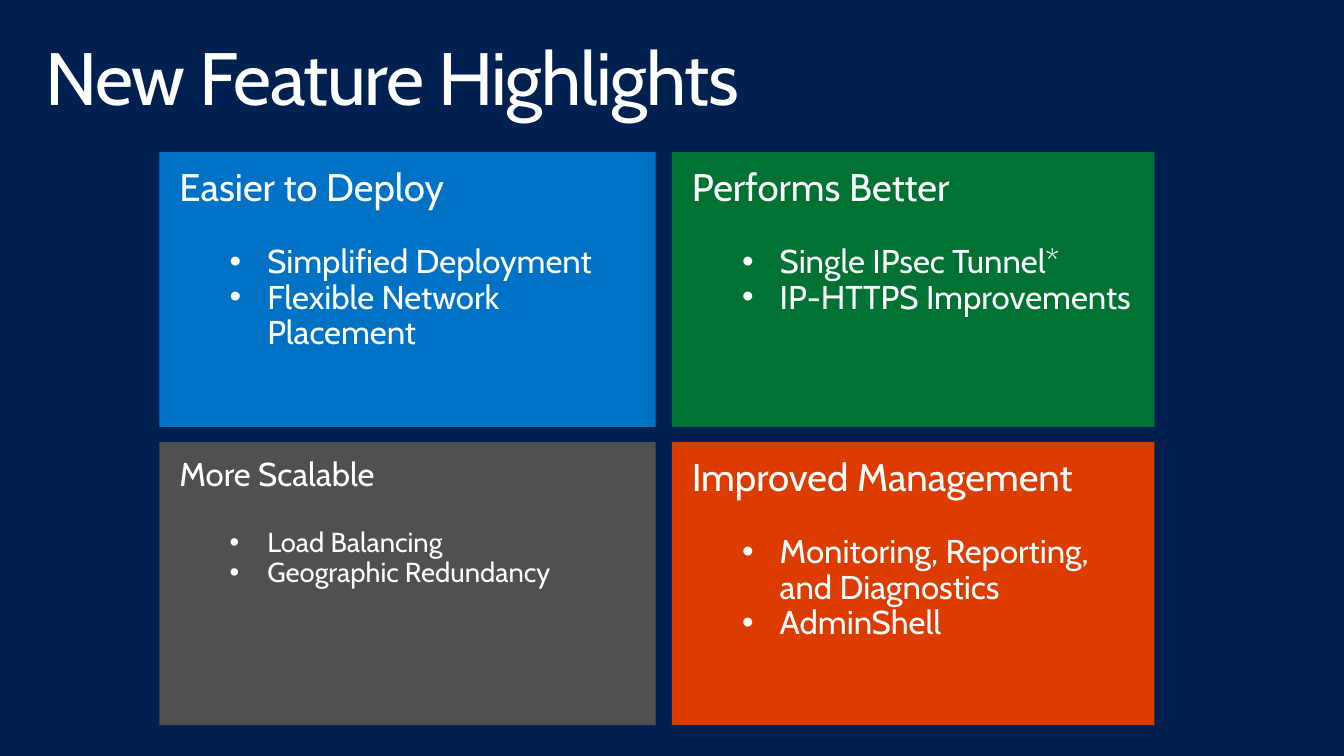
from dataclasses import dataclass

from lxml import etree
from pptx import Presentation
from pptx.dml.color import RGBColor
from pptx.enum.shapes import MSO_SHAPE
from pptx.enum.text import MSO_ANCHOR, PP_ALIGN
from pptx.oxml.ns import qn
from pptx.util import Cm, Pt

RECTANGLE = MSO_SHAPE.RECTANGLE
TOP = MSO_ANCHOR.TOP
LEFT = PP_ALIGN.LEFT


@dataclass(frozen=True)
class Theme:
    font: str = "Cabin"
    background: str = "002050"
    text: str = "FFFFFF"
    blue: str = "0072C6"
    green: str = "007233"
    grey: str = "505050"
    orange: str = "DC3C00"
    title_size: int = 54
    heading_size: int = 28
    bullet_size: int = 24
    small_heading_size: int = 24
    small_bullet_size: int = 20
    heading_gap: int = 26
    line_spacing: float = 0.9


THEME = Theme()

# (left, width) of each column and (top, height) of each row, in cm
COLUMNS = ((4.1, 12.75), (17.27, 12.4))
ROWS = ((3.91, 7.06), (11.36, 7.28))

# column, row, fill, heading size, bullet size, heading, bullets
TILES = (
    (0, 0, THEME.blue, THEME.heading_size, THEME.bullet_size,
     "Easier to Deploy",
     ("Simplified Deployment", "Flexible Network Placement")),
    (1, 0, THEME.green, THEME.heading_size, THEME.bullet_size,
     "Performs Better",
     ("Single IPsec Tunnel*", "IP-HTTPS Improvements")),
    (0, 1, THEME.grey, THEME.small_heading_size, THEME.small_bullet_size,
     "More Scalable",
     ("Load Balancing", "Geographic Redundancy")),
    (1, 1, THEME.orange, THEME.heading_size, THEME.bullet_size,
     "Improved Management",
     ("Monitoring, Reporting, and Diagnostics", "AdminShell")),
)


def set_frame(frame, side, top):
    """Wrap the text from the top, with equal opposite insets in cm."""
    frame.word_wrap = True
    frame.vertical_anchor = TOP
    frame.margin_left = frame.margin_right = Cm(side)
    frame.margin_top = frame.margin_bottom = Cm(top)


def write(paragraph, text, size, gap_after=0, tracking=None, bullet=False):
    """Fill a paragraph; tracking is in hundredths of a point."""
    paragraph.alignment = LEFT
    paragraph.line_spacing = THEME.line_spacing
    paragraph.space_before = Pt(0)
    paragraph.space_after = Pt(gap_after)
    run = paragraph.add_run()
    run.text = text
    run.font.name = THEME.font
    run.font.size = Pt(size)
    run.font.color.rgb = RGBColor.from_string(THEME.text)
    if tracking is not None:
        run.font._element.set("spc", str(tracking))
    if bullet:
        add_bullet(paragraph)


def add_bullet(paragraph):
    paragraph.level = 1
    properties = paragraph._p.get_or_add_pPr()
    properties.set("marL", str(Cm(2.26)))
    properties.set("indent", str(Cm(-0.97)))
    etree.SubElement(properties, qn("a:buFont"), typeface="Arial")
    etree.SubElement(properties, qn("a:buChar"), char="•")


def add_title(slide, text):
    title = slide.shapes.add_textbox(Cm(0.76), Cm(0.81), Cm(22.86), Cm(2.46))
    set_frame(title.text_frame, 0.41, 0.25)
    write(title.text_frame.paragraphs[0], text, THEME.title_size, tracking=-100)


def add_tile(slide, column, row, fill, heading_size, bullet_size, heading, bullets):
    left, width = COLUMNS[column]
    top, height = ROWS[row]
    tile = slide.shapes.add_shape(RECTANGLE, Cm(left), Cm(top), Cm(width), Cm(height))
    tile.shadow.inherit = False
    tile.fill.solid()
    tile.fill.fore_color.rgb = RGBColor.from_string(fill)
    tile.line.fill.background()
    frame = tile.text_frame
    set_frame(frame, 0.51, 0.41)
    write(frame.paragraphs[0], heading, heading_size, gap_after=THEME.heading_gap)
    for feature in bullets:
        write(frame.add_paragraph(), feature, bullet_size, bullet=True)


def main():
    deck = Presentation()
    deck.slide_width, deck.slide_height = Cm(34.54), Cm(19.43)
    slide = deck.slides.add_slide(deck.slide_layouts[6])
    slide.background.fill.solid()
    slide.background.fill.fore_color.rgb = RGBColor.from_string(THEME.background)
    add_title(slide, "New Feature Highlights")
    for tile in TILES:
        add_tile(slide, *tile)
    deck.save("out.pptx")


if __name__ == "__main__":
    main()
